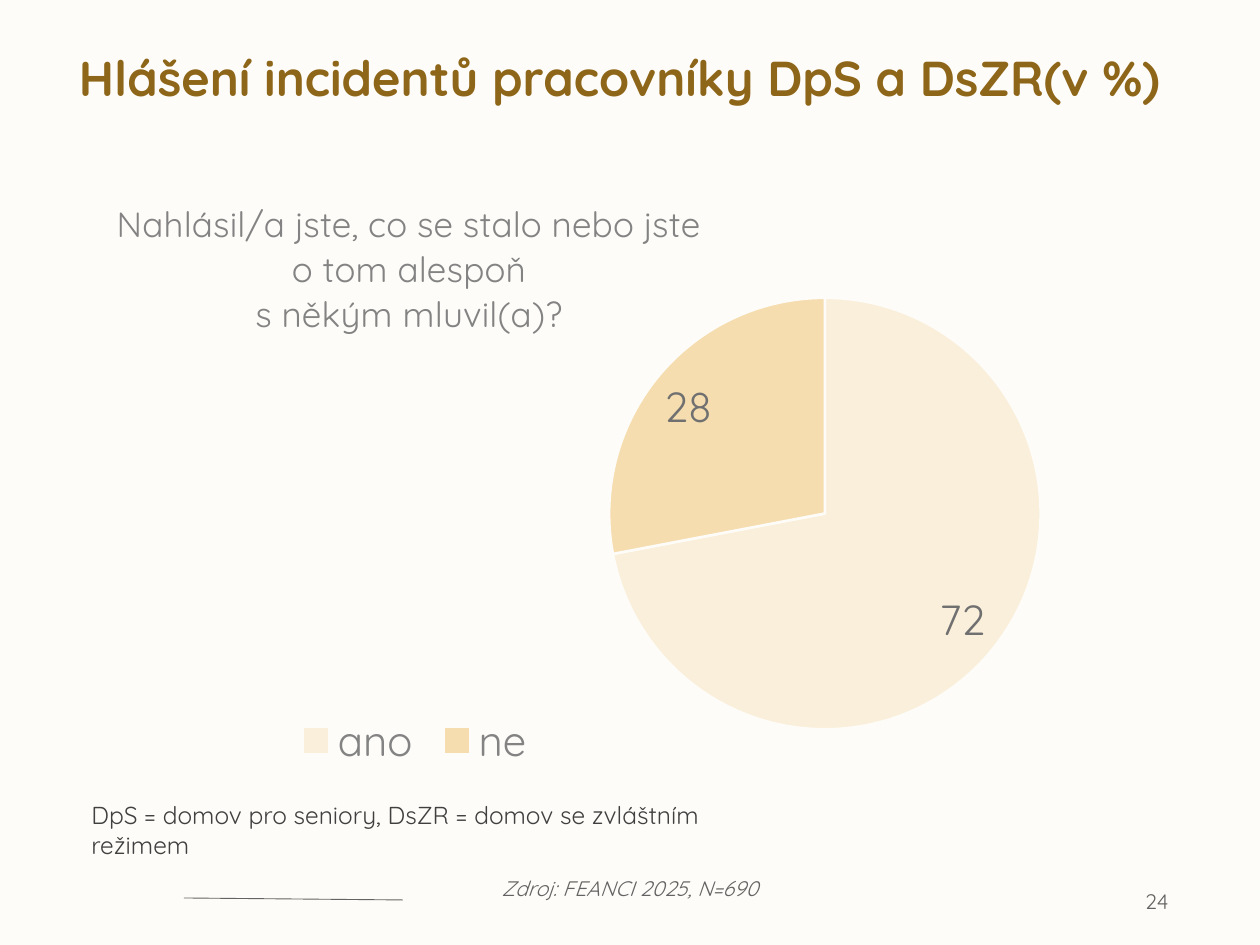
from lxml.etree import SubElement
from pptx import Presentation
from pptx.chart.data import CategoryChartData
from pptx.dml.color import RGBColor
from pptx.enum.chart import XL_CHART_TYPE, XL_LABEL_POSITION, XL_LEGEND_POSITION
from pptx.enum.shapes import MSO_CONNECTOR
from pptx.enum.text import MSO_ANCHOR, PP_ALIGN
from pptx.oxml import parse_xml
from pptx.oxml.ns import nsdecls, qn
from pptx.util import Inches, Pt

PX = Inches(10) // 1260
FONT = "Quicksand"
rgb = RGBColor.from_string


def add_text(text, x, y, w, h, size=12, color="636363", bold=False, italic=False,
             align=PP_ALIGN.LEFT, anchor=MSO_ANCHOR.TOP, inset=None, spacing=None):
    tf = s.shapes.add_textbox(x * PX, y * PX, w * PX, h * PX).text_frame
    tf.word_wrap = True
    tf.vertical_anchor = anchor
    if inset is not None:
        tf.margin_left = tf.margin_right = tf.margin_top = tf.margin_bottom = inset
    p = tf.paragraphs[0]
    p.alignment = align
    p.line_spacing = spacing
    r = p.add_run()
    r.text = text
    set_font(r.font, size, color, bold, italic)


def set_font(font, size, color, bold=False, italic=False):
    font.name = FONT
    font.size = Pt(size)
    font.color.rgb = rgb(color)
    font.bold = bold
    font.italic = italic


prs = Presentation()
prs.slide_width, prs.slide_height = Inches(10), Inches(7.5)
s = prs.slides.add_slide(prs.slide_layouts[6])
s.background.fill.solid()
s.background.fill.fore_color.rgb = rgb("FEFCF8")

line = s.shapes.add_connector(MSO_CONNECTOR.STRAIGHT, 184 * PX, 898 * PX, 403 * PX, 900 * PX)
line.line.color.rgb = rgb("636363")
line.line.width = Pt(0.5)
SubElement(line._element.spPr, qn("a:effectLst"))

add_text("24", 897, 876, 284, 50, align=PP_ALIGN.RIGHT, anchor=MSO_ANCHOR.MIDDLE)
add_text("Zdroj: FEANCI 2025, N=690", 417, 863, 426, 50, italic=True,
         align=PP_ALIGN.CENTER, anchor=MSO_ANCHOR.MIDDLE)
add_text("Hlášení incidentů pracovníky DpS a DsZR(v %)", 79, 59, 1101, 50, size=28,
         color="8E6619", bold=True, inset=0, spacing=0.8)

data = CategoryChartData(number_format="###0")
data.categories = ["ano", "ne"]
data.add_series("Series 1", [72, 28])
chart = s.shapes.add_chart(XL_CHART_TYPE.PIE, 102 * PX, 190 * PX, 1079 * PX, 605 * PX, data).chart
set_font(chart.font, 24, "404040")

tf = chart.chart_title.text_frame
for i, text in enumerate(["Nahlásil/a jste, co se stalo nebo jste", "o tom alespoň", "s někým mluvil(a)?"]):
    p = tf.add_paragraph() if i else tf.paragraphs[0]
    p.alignment = PP_ALIGN.CENTER
    r = p.add_run()
    r.text = text
    set_font(r.font, 20, "838383")

chart.has_legend = True
chart.legend.position = XL_LEGEND_POSITION.BOTTOM
chart.legend.include_in_layout = False
set_font(chart.legend.font, 24, "838383")

plot = chart.plots[0]
plot.vary_by_categories = True
for i, color in enumerate(["FAEFDA", "F5DDAF"]):
    point = plot.series[0].points[i].format
    point.fill.solid()
    point.fill.fore_color.rgb = rgb(color)
    point.line.color.rgb = rgb("FEFCF8")
    point.line.width = Pt(1.5)

plot.has_data_labels = True
labels = plot.data_labels
labels.show_value = True
labels.show_percentage = False
labels.number_format = "###0"
labels.number_format_is_linked = False
labels.position = XL_LABEL_POSITION.INSIDE_END
set_font(labels.font, 24, "707070")

for part, index, target, box in [
    (chart.chart_title._element, 1, "", {"x": 0.01, "y": 0.01}),
    (chart._chartSpace.chart.plotArea, 0, "inner", {"x": 0.47, "y": 0.14, "w": 0.4, "h": 0.79}),
    (chart.legend._element, 1, "", {"x": 0.17, "y": 0.86, "w": 0.24, "h": 0.1}),
]:
    for old in part.findall(qn("c:layout")):
        part.remove(old)
    layout = parse_xml(f"<c:layout {nsdecls('c')}><c:manualLayout/></c:layout>")
    if target:
        SubElement(layout[0], qn("c:layoutTarget")).set("val", target)
    for key in "xy":
        SubElement(layout[0], qn(f"c:{key}Mode")).set("val", "edge")
    for key, value in box.items():
        SubElement(layout[0], qn(f"c:{key}")).set("val", str(value))
    part.insert(index, layout)

add_text("DpS = domov pro seniory, DsZR = domov se zvláštním režimem", 79, 794, 709, 43,
         size=14, color="404040")

prs.save("out.pptx")
